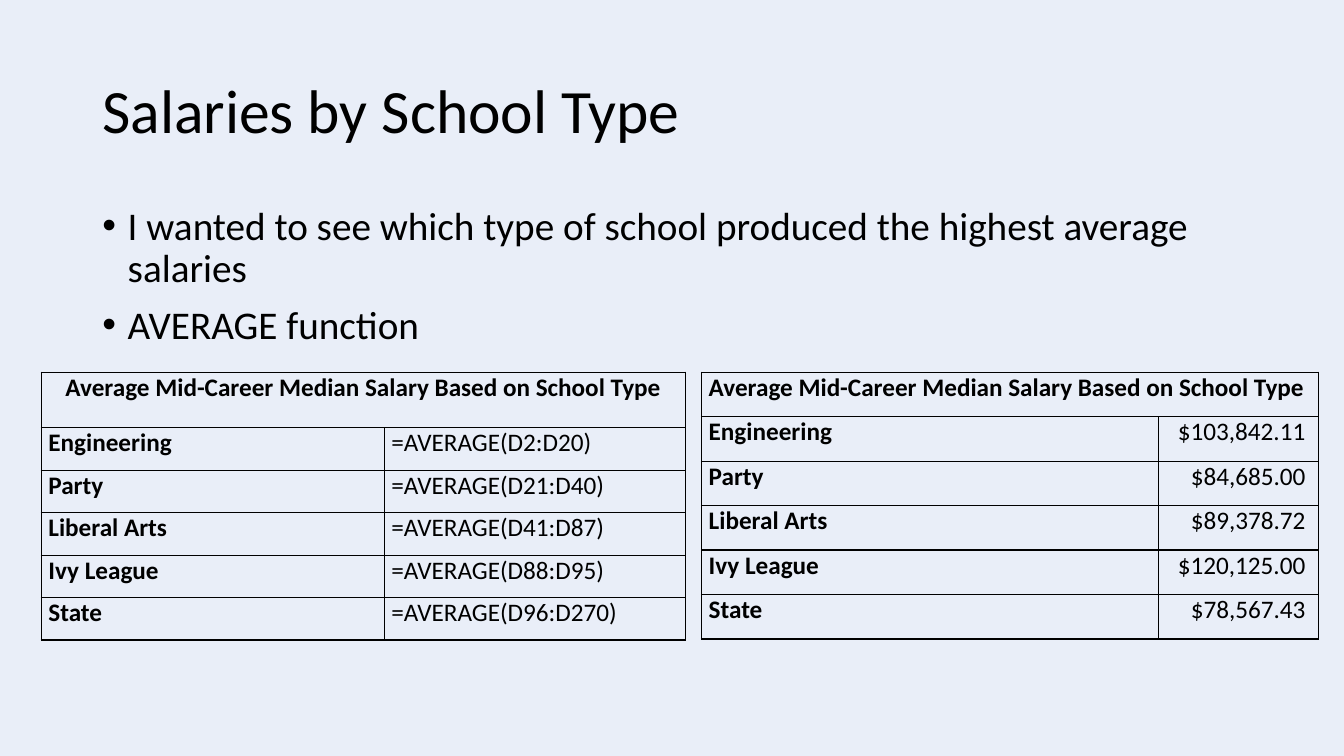
"""Build the slide on average salaries by school type."""
import pptx
import pptx.dml.color
import pptx.enum.text
import pptx.oxml
import pptx.oxml.ns
import pptx.util
from dataclasses import dataclass

Cm, Pt = pptx.util.Cm, pptx.util.Pt
Align, Anchor = pptx.enum.text.PP_ALIGN, pptx.enum.text.MSO_ANCHOR
Color = pptx.dml.color.RGBColor.from_string


@dataclass
class Theme:
    font: str = "Calibri"
    ink: str = "000000"
    back: str = "E9EEF8"
    title: int = 44
    body: int = 28
    cell: int = 18
    rule: int = 1


theme = Theme()


def write(frame, *lines, size, bold=False, align=Align.LEFT, space=None,
          before=0, bullet=False):
    frame.word_wrap = True
    for i, line in enumerate(lines):
        para = frame.add_paragraph() if i else frame.paragraphs[0]
        para.alignment = align
        para.line_spacing = space
        para.space_before = Pt(before)
        run = para.add_run()
        run.text = line
        run.font.name = theme.font
        run.font.size = Pt(size)
        run.font.bold = bold
        run.font.color.rgb = Color(theme.ink)
        if bullet:
            props = para._p.get_or_add_pPr()
            props.set("marL", str(Cm(0.64)))
            props.set("indent", str(-Cm(0.64)))
            props.append(pptx.oxml.parse_xml(
                f'<a:buFont {pptx.oxml.ns.nsdecls("a")} typeface="Arial"/>'))
            props.append(pptx.oxml.parse_xml(
                f'<a:buChar {pptx.oxml.ns.nsdecls("a")} char="•"/>'))


def border(cell):
    props = cell._tc.get_or_add_tcPr()
    for i, side in enumerate("LRTB"):
        props.insert(i, pptx.oxml.parse_xml(
            f'<a:ln{side} {pptx.oxml.ns.nsdecls("a")} w="{Pt(theme.rule)}">'
            f'<a:solidFill><a:srgbClr val="{theme.ink}"/></a:solidFill>'
            f'</a:ln{side}>'))


deck = pptx.Presentation()
deck.slide_width, deck.slide_height = Cm(33.87), Cm(19.05)
slide = deck.slides.add_slide(deck.slide_layouts[6])
slide.background.fill.solid()
slide.background.fill.fore_color.rgb = Color(theme.back)

title = slide.shapes.add_textbox(Cm(2.33), Cm(1.02), Cm(29.21), Cm(3.68))
title.text_frame.vertical_anchor = Anchor.MIDDLE
write(title.text_frame, "Salaries by School Type", size=theme.title, space=0.9)

body = slide.shapes.add_textbox(Cm(2.33), Cm(5.08), Cm(29.21), Cm(12.09))
write(body.text_frame,
      "I wanted to see which type of school produced the highest average salaries",
      "AVERAGE function",
      size=theme.body, space=0.9, before=10, bullet=True)

head = "Average Mid-Career Median Salary Based on School Type"
schools = ["Engineering", "Party", "Liberal Arts", "Ivy League", "State"]
sums = [f"=AVERAGE({span})" for span in
        ["D2:D20", "D21:D40", "D41:D87", "D88:D95", "D96:D270"]]
means = ["$103,842.11", "$84,685.00", "$89,378.72", "$120,125.00", "$78,567.43"]

grids = [
    (1.04, (8.64, 7.59), 1.4, 1.07, sums, Align.CENTER, Align.LEFT, 0.18),
    (17.68, (11.51, 4.04), 1.12, 1.12, means, Align.LEFT, Align.RIGHT, 0.33),
]
for left, widths, top, step, values, lead, side, inset in grids:
    rows = [(head, "")] + list(zip(schools, values))
    table = slide.shapes.add_table(
        len(rows), 2, Cm(left), Cm(9.38), Cm(sum(widths)),
        Cm(top + step * len(schools))).table
    table.first_row = table.horz_banding = False
    for col, width in zip(table.columns, widths):
        col.width = Cm(width)
    for r, row in enumerate(rows):
        table.rows[r].height = Cm(step if r else top)
        for c, text in enumerate(row):
            cell = table.cell(r, c)
            cell.fill.background()
            border(cell)
            cell.margin_top = cell.margin_bottom = 0
            cell.margin_left = Cm(0.18)
            cell.margin_right = Cm(inset if c else 0.18)
            if text:
                align = side if c else Align.LEFT if r else lead
                write(cell.text_frame, text, size=theme.cell, bold=c == 0, align=align)
    table.cell(0, 0).merge(table.cell(0, 1))

deck.save("out.pptx")
